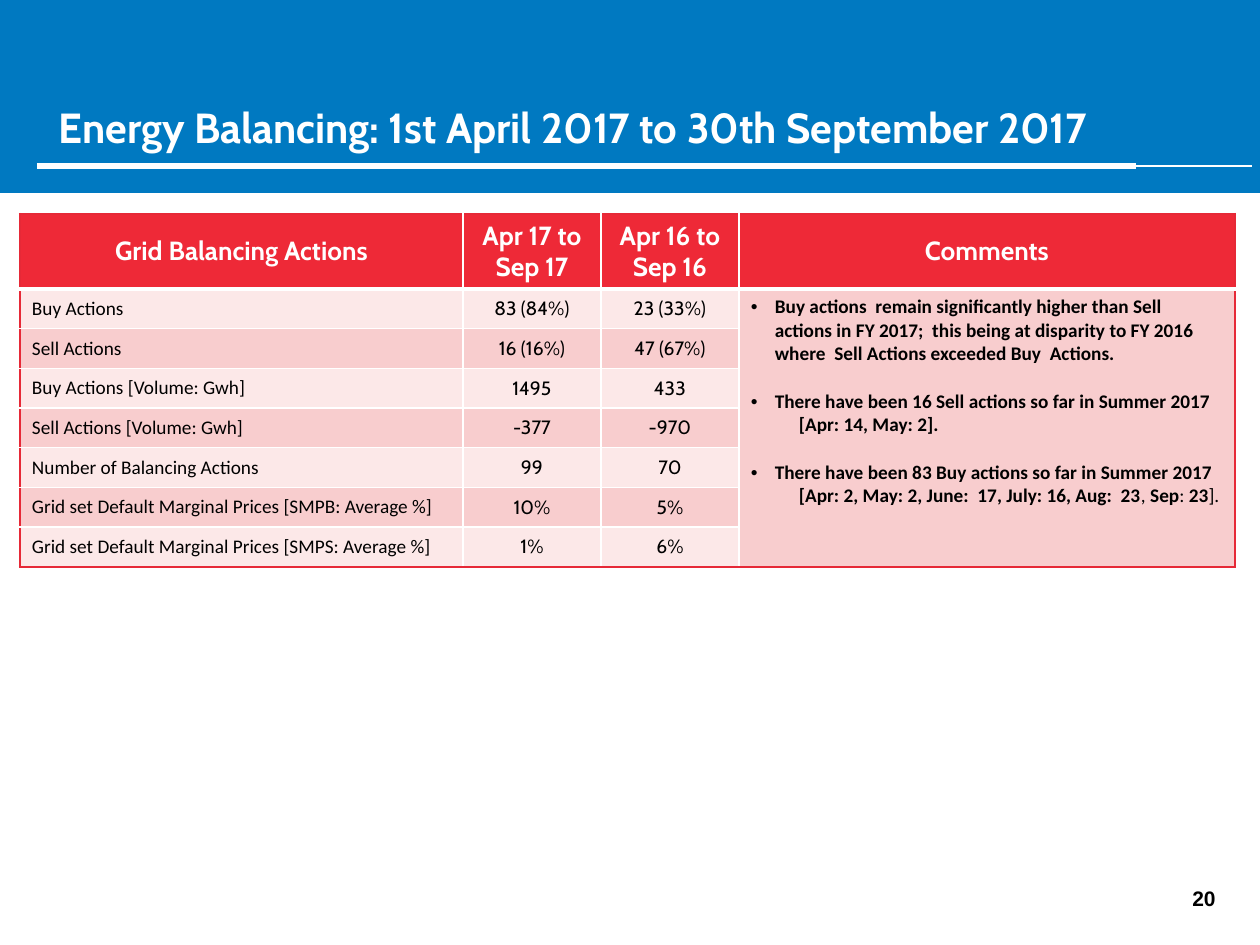
from lxml.etree import SubElement
from pptx import Presentation
from pptx.dml.color import RGBColor
from pptx.enum.shapes import MSO_CONNECTOR, MSO_SHAPE
from pptx.enum.text import MSO_ANCHOR as Anchor, PP_ALIGN as Align
from pptx.oxml.ns import qn
from pptx.util import Emu, Pt

WHITE = RGBColor(0xFF, 0xFF, 0xFF)
BLACK = RGBColor(0x00, 0x00, 0x00)
BLUE = RGBColor(0x00, 0x79, 0xC1)
HEADER_RED = RGBColor(0xEE, 0x29, 0x37)
EDGE_RED = RGBColor(0xE6, 0x29, 0x37)
PALE_PINK = RGBColor(0xFC, 0xE8, 0xE8)
PINK = RGBColor(0xF8, 0xCD, 0xCE)

HEADERS = ["Grid Balancing Actions", "Apr 17 to Sep 17", "Apr 16 to Sep 16", "Comments"]
ACTIONS = [
    ("Buy Actions", "83 (84%)", "23 (33%)"),
    ("Sell Actions", "16 (16%)", "47 (67%)"),
    ("Buy Actions [Volume: Gwh]", "1495", "433"),
    ("Sell Actions [Volume: Gwh]", "-377", "-970"),
    ("Number of Balancing Actions", "99", "70"),
    ("Grid set Default Marginal Prices [SMPB: Average %]", "10%", "5%"),
    ("Grid set Default Marginal Prices [SMPS: Average %]", "1%", "6%"),
]
# Each comment: is it a bullet, and its runs, alternately bold and regular
COMMENTS = [
    (True, ["Buy actions  remain significantly higher than Sell actions in FY 2017;  "
            "this being at disparity to FY 2016 where  Sell Actions exceeded Buy  Actions."]),
    (True, ["There have been 16 Sell actions so far in Summer 2017"]),
    (False, ["[Apr: 14, May: 2]."]),
    (True, ["There have been 83 Buy actions so far in Summer 2017"]),
    (False, ["[Apr: 2, May: 2, June:  17, July: 16, Aug:  23", ", ", "Sep", ": ", "23", "]."]),
]
COLUMN_WIDTHS = [443, 138, 138, 496]
COMMENT_COLUMN = len(HEADERS) - 1
LAST_ROW = len(ACTIONS)


def px(length):
    return Emu(round(length * 914400 / 126))


def set_font(paragraph, name, size, color, bold):
    font = paragraph.font
    font.name, font.size, font.bold = name, Pt(size), bold
    font.color.rgb = color


def add_rule(slide, start, end, y, weight):
    line = slide.shapes.add_connector(MSO_CONNECTOR.STRAIGHT, px(start), px(y), px(end), px(y))
    line.line.color.rgb = WHITE
    line.line.width = Pt(weight)
    SubElement(line._element.spPr, qn("a:effectLst"))


def add_banner(slide, left, top, width, height):
    banner = slide.shapes.add_shape(MSO_SHAPE.RECTANGLE, px(left), px(top), px(width), px(height))
    banner.shadow.inherit = False
    banner.fill.solid()
    banner.fill.fore_color.rgb = BLUE
    banner.line.fill.background()
    title = slide.shapes.title
    title._element.addprevious(banner._element)

    rule_y = top + height - 27
    add_rule(slide, left + 38, left + width - 8, rule_y, 0.75)
    add_rule(slide, left + 37, left + 1136, rule_y, 3)

    title.left, title.top = px(left + 46), px(top + 100)
    title.width, title.height = px(1149), px(63)
    frame = title.text_frame
    frame.text = "Energy Balancing: 1st April 2017 to 30th September 2017"
    frame.vertical_anchor = Anchor.BOTTOM
    paragraph = frame.paragraphs[0]
    paragraph.alignment = Align.LEFT
    set_font(paragraph, "Cabin", 24, WHITE, True)


def set_borders(cell, row, column):
    """Red around the table, white inside, with a thick rule under the header."""
    merged = column == COMMENT_COLUMN and row > 0
    edge, inner, heavy = (EDGE_RED, 1.5), (WHITE, 1), (WHITE, 3)
    borders = {
        "lnL": edge if column == 0 else inner,
        "lnR": edge if column == COMMENT_COLUMN else inner,
        "lnT": edge if row == 0 else heavy if row == 1 or merged else inner,
        "lnB": heavy if row == 0 else edge if row == LAST_ROW or merged else inner,
    }
    properties = cell._tc.get_or_add_tcPr()
    for tag, (color, weight) in borders.items():
        line = SubElement(properties, qn(f"a:{tag}"), w=str(Pt(weight)))
        fill = SubElement(line, qn("a:solidFill"))
        SubElement(fill, qn("a:srgbClr"), val=str(color))


def style_cell(cell, row, column, fill):
    set_borders(cell, row, column)
    cell.fill.solid()
    cell.fill.fore_color.rgb = fill
    cell.vertical_anchor = Anchor.MIDDLE
    narrow = column in (1, 2)
    cell.margin_left = cell.margin_right = px(0 if narrow else 12)
    cell.margin_top = cell.margin_bottom = px(0 if narrow else 6)


def write_cell(cell, text, font_name, size, color, bold, alignment):
    cell.text = text
    paragraph = cell.text_frame.paragraphs[0]
    paragraph.alignment = alignment
    set_font(paragraph, font_name, size, color, bold)


def write_comments(cell):
    cell.vertical_anchor = Anchor.TOP
    cell.margin_right = px(13)
    frame = cell.text_frame
    for index, (bulleted, runs) in enumerate(COMMENTS):
        paragraph = frame.add_paragraph() if index else frame.paragraphs[0]
        properties = paragraph._p.get_or_add_pPr()
        properties.set("marL", str(px(24 if bulleted else 48)))
        properties.set("indent", str(px(-24 if bulleted else 0)))
        if bulleted:
            SubElement(properties, qn("a:buFont"), typeface="Arial")
            SubElement(properties, qn("a:buChar"), char="•")
            if index:
                paragraph.space_before = Pt(13.4)
        paragraph.alignment = Align.LEFT
        set_font(paragraph, "Calibri", 11, BLACK, True)
        for position, text in enumerate(runs):
            run = paragraph.add_run()
            run.text = text
            run.font.bold = position % 2 == 0


def add_actions_table(slide, left, top, header_height, body_height):
    frame = slide.shapes.add_table(LAST_ROW + 1, len(HEADERS), px(left), px(top),
                                   px(sum(COLUMN_WIDTHS)), px(header_height + body_height))
    table = frame.table
    table.horz_banding = False
    for column, width in zip(table.columns, COLUMN_WIDTHS):
        column.width = px(width)
    for index, row in enumerate(table.rows):
        row.height = px(body_height / LAST_ROW if index else header_height)

    for column, text in enumerate(HEADERS):
        cell = table.cell(0, column)
        style_cell(cell, 0, column, HEADER_RED)
        write_cell(cell, text, "Cabin", 15, WHITE, True, Align.CENTER)

    for row, values in enumerate(ACTIONS, start=1):
        for column, text in enumerate(values):
            cell = table.cell(row, column)
            style_cell(cell, row, column, PALE_PINK if row % 2 else PINK)
            font_name, alignment = ("Cabin", Align.CENTER) if column else ("Calibri", Align.LEFT)
            write_cell(cell, text, font_name, 11, BLACK, False, alignment)
        style_cell(table.cell(row, COMMENT_COLUMN), row, COMMENT_COLUMN, PINK)

    comments = table.cell(1, COMMENT_COLUMN)
    comments.merge(table.cell(LAST_ROW, COMMENT_COLUMN))
    write_comments(comments)


def add_page_number(slide, left, top, width, height):
    frame = slide.shapes.add_textbox(px(left), px(top), px(width), px(height)).text_frame
    frame.word_wrap = True
    frame.text = "20"
    paragraph = frame.paragraphs[0]
    paragraph.alignment = Align.RIGHT
    set_font(paragraph, "Arial", 12, BLACK, True)


def main():
    presentation = Presentation()
    presentation.slide_width, presentation.slide_height = px(1260), px(945)
    slide = presentation.slides.add_slide(presentation.slide_layouts[5])
    add_banner(slide, 0, -5, 1260, 198)
    add_actions_table(slide, 20, 214, 75, 278)
    add_page_number(slide, 934, 879, 294, 50)
    presentation.save("out.pptx")


if __name__ == "__main__":
    main()
